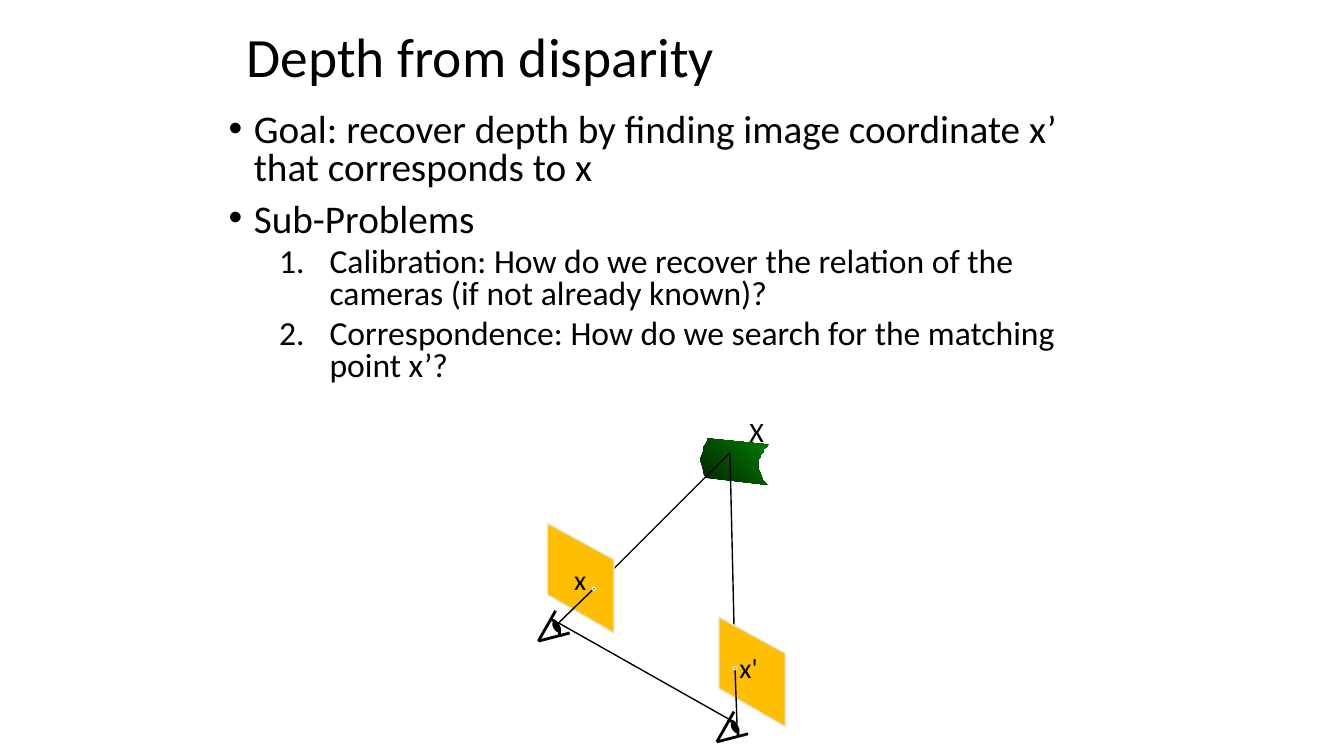
from pptx import Presentation
from pptx.dml.color import RGBColor
from pptx.enum.shapes import MSO_CONNECTOR as CONN, MSO_SHAPE as SHAPE
from pptx.enum.text import MSO_ANCHOR as ANCHOR, PP_ALIGN as ALIGN
from pptx.oxml.ns import qn
from pptx.util import Inches, Pt
from lxml.etree import SubElement as Sub

deck = Presentation()
deck.slide_width, deck.slide_height = Inches(13.33), Inches(7.5)
slide = deck.slides.add_slide(deck.slide_layouts[6])
shapes = slide.shapes

BLACK, GOLD, GREY = "000000", "FEBF02", "E7E6E6"
DARK, GREEN = "012501", "037C03"


def paint(obj, color):
    """Give a fill, line or font colour from a hex string."""
    if hasattr(obj, "solid"):
        obj.solid()
        obj.fore_color.rgb = RGBColor.from_string(color)
    else:
        obj.color.rgb = RGBColor.from_string(color)


def trace(points, closed):
    """Build an outline through points given in inches."""
    dots = [(Inches(x), Inches(y)) for x, y in points]
    pen = shapes.build_freeform(*dots[0], scale=1.0)
    pen.add_line_segments(dots[1:], close=closed)
    form = pen.convert_to_shape()
    form.shadow.inherit = False
    return form


# Title, bullets and point labels
bullet = dict(left=0.25, hang=-0.25, tag="a:buChar", mark={"char": "•"})
number = dict(left=1, hang=-0.5, tag="a:buAutoNum", mark={"type": "arabicPeriod"})
big = dict(line_spacing=0.8, space_before=Pt(10))
small = dict(line_spacing=0.8, space_before=Pt(5), level=1)
label = dict(alignment=ALIGN.CENTER, space_before=Pt(4))
texts = [
    ((2.35, 0.27, 8.62, 0.64), ANCHOR.MIDDLE, [
        ("Depth from disparity", 39.6, dict(line_spacing=0.9), None)]),
    ((2.17, 1.08, 9, 2.92), ANCHOR.TOP, [
        ("Goal: recover depth by finding image coordinate x’ that corresponds to x",
         28, big, bullet),
        ("Sub-Problems", 28, big, bullet),
        ("Calibration: How do we recover the relation of the cameras "
         "(if not already known)?", 24, small, number),
        ("Correspondence: How do we search for the matching point x’?",
         24, small, number)]),
    ((7.25, 4.06, 0.51, 0.44), ANCHOR.MIDDLE, [("X", 20, label, None)]),
    ((5.5, 5.53, 0.51, 0.44), ANCHOR.MIDDLE, [("x", 20, label, None)]),
    ((7.17, 6.4, 0.51, 0.44), ANCHOR.MIDDLE, [("x'", 20, label, None)]),
]
boxes = []
for place, anchor, lines in texts:
    box = shapes.add_textbox(*map(Inches, place))
    boxes.append(box)
    frame = box.text_frame
    frame.word_wrap, frame.vertical_anchor = True, anchor
    for i, (words, size, style, mark) in enumerate(lines):
        para = frame.add_paragraph() if i else frame.paragraphs[0]
        for name, value in style.items():
            setattr(para, name, value)
        run = para.add_run()
        run.text = words
        run.font.name, run.font.size = "Calibri", Pt(size)
        paint(run.font, BLACK)
        if mark:
            props = para._p.get_or_add_pPr()
            props.set("marL", str(Inches(mark["left"])))
            props.set("indent", str(Inches(mark["hang"])))
            Sub(props, qn("a:buFont"), typeface="Arial" if mark is bullet else "+mj-lt")
            Sub(props, qn(mark["tag"]), **mark["mark"])

# Surface patch around the scene point
patch = trace([
    (7.02, 4.35), (7.01, 4.39), (6.98, 4.43), (6.98, 4.47), (6.95, 4.54),
    (6.95, 4.58), (6.97, 4.64), (6.98, 4.7), (7, 4.74), (7.61, 4.81),
    (7.57, 4.77), (7.54, 4.69), (7.52, 4.65), (7.52, 4.56), (7.54, 4.54),
    (7.55, 4.5), (7.57, 4.49), (7.57, 4.46), (7.61, 4.43), (7.62, 4.41)], True)
patch.fill.gradient()
patch.fill.gradient_angle = 45
for stop, color in zip(patch.fill.gradient_stops, (DARK, GREEN)):
    paint(stop, color)
patch.line.fill.background()

# Lines in drawing order, with the two image planes between them
scene = (7.24, 4.49)
eyes = [(5.54, 6.18), (7.31, 7.18)]
hits = [(5.89, 5.84), (7.29, 6.63)]
rays = [(eyes[0], eyes[1], 1), (hits[0], scene, 1), (hits[1], scene, 1)]
rays += ["planes"] + [(eye, hit, 1) for eye, hit in zip(eyes, hits)]
for x, y in eyes:
    corner = (x - 0.2, y + 0.18)
    rays += [((x - 0.03, y - 0.12), corner, 2), (corner, (x + 0.11, y + 0.1), 2)]
for ray in rays:
    if ray == "planes":
        for x, y in [(5.43, 5.19), (7.13, 6.12)]:
            plane = trace([(x, y), (x + 0.66, y + 0.36), (x + 0.66, y + 1.09),
                           (x, y + 0.71)], True)
            paint(plane.fill, GOLD)
            paint(plane.line, GREY)
            plane.line.width = Pt(1)
        continue
    start, end, width = ray
    link = shapes.add_connector(CONN.STRAIGHT, *map(Inches, start + end))
    paint(link.line, BLACK)
    link.line.width = Pt(width)
    Sub(link._element.spPr, qn("a:effectLst"))

# Eyeball arcs, pupils and projected points
ovals = [(x, y, 0.03, 0.03, 0, GREEN, GREY) for x, y in hits]
for x, y in eyes:
    arc = trace([(x - 0.07, y - 0.03), (x - 0.04, y - 0.02), (x - 0.01, y + 0.01),
                 (x + 0.01, y + 0.06), (x + 0.01, y + 0.12)], False)
    arc.fill.background()
    paint(arc.line, BLACK)
    arc.line.width = Pt(2)
    ovals.append((x - 0.02, y + 0.04, 0.05, 0.11, 329, BLACK, BLACK))
for x, y, wide, high, turn, fill, edge in ovals:
    dot = shapes.add_shape(SHAPE.OVAL, Inches(x - wide / 2), Inches(y - high / 2),
                           Inches(wide), Inches(high))
    dot.rotation = turn
    dot.shadow.inherit = False
    paint(dot.fill, fill)
    paint(dot.line, edge)
    dot.line.width = Pt(1)

# Labels go in front of the drawing
for box in boxes[2:]:
    shapes._spTree.append(box._element)

deck.save("out.pptx")
